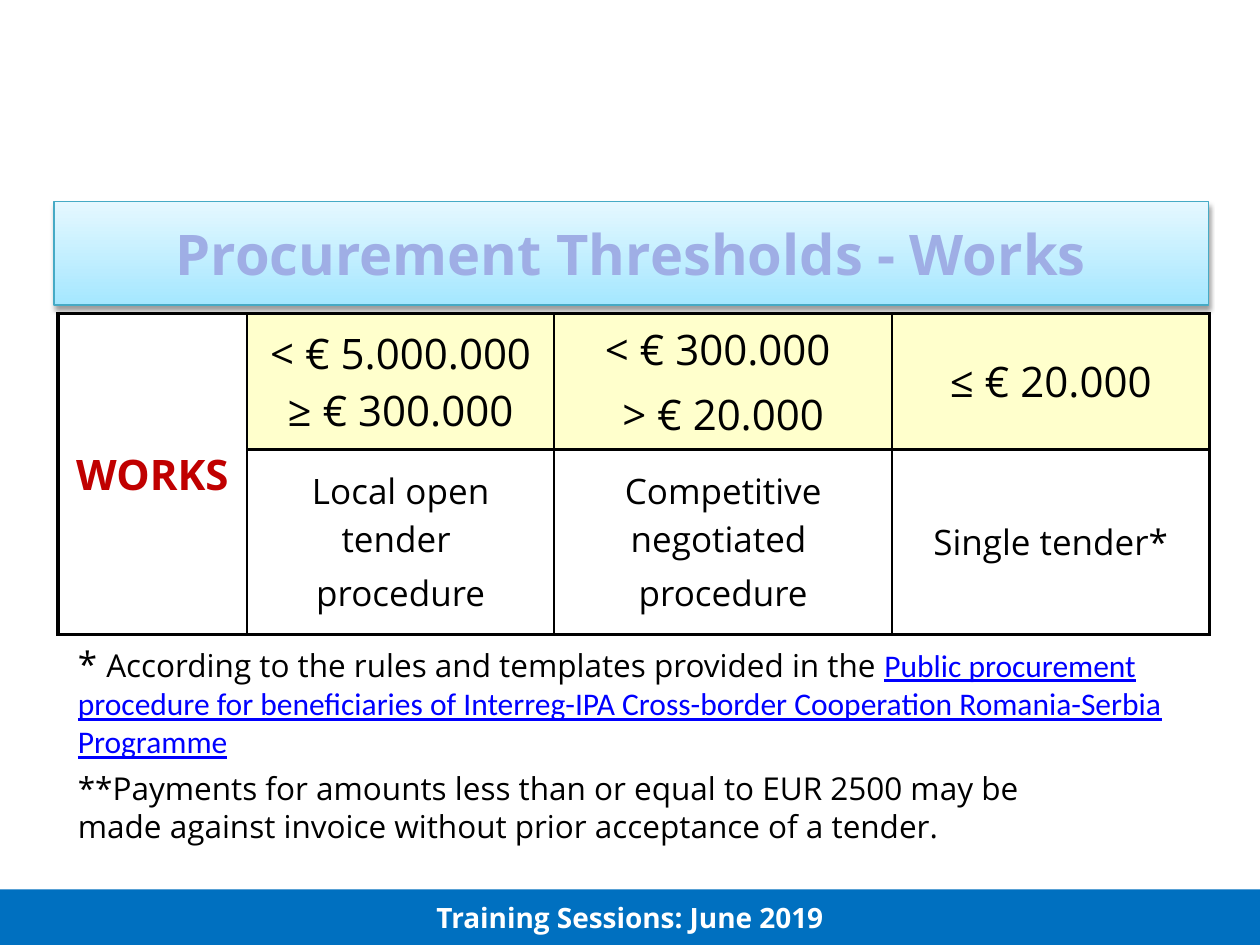
from lxml import etree
from pptx import Presentation
from pptx.dml.color import RGBColor
from pptx.enum import shapes, text
from pptx.oxml.ns import qn
from pptx.util import Inches, Pt

COLORS = {
    "footer": "0070C0", "white": "FFFFFF", "black": "000000", "title": "9FAEE5",
    "title_top": "E5F8FF", "title_bottom": "A5E7FF", "title_line": "46AAC5",
    "works": "C00000", "threshold": "FFFFCC", "link": "0000FF",
}
FONT = "Open Sans"
TITLE = "Procurement Thresholds - Works"
FOOTER = "Training Sessions: June 2019"
CATEGORY = "WORKS"
THRESHOLDS = [["< € 5.000.000 ≥ € 300.000"], ["< € 300.000 ", "> € 20.000"], ["≤ € 20.000"]]
PROCEDURES = [["Local open tender ", "procedure"], ["Competitive negotiated ", "procedure"],
              ["Single tender*"]]
COLUMN_WIDTHS = [1.5, 2.44, 2.68, 2.52]
ROW_HEIGHTS = [1.07, 1.47]
COLUMN_LINES = [2.25, 1, 1.5, 1, 2.25]
ROW_LINE = 2.25
# Each run: words, size, font, colour, underlined
NOTES = [
    [("* ", 20, FONT, "black", False),
     ("According to the rules and templates provided in the ", 18, FONT, "black", False),
     ("Public procurement procedure for beneficiaries of Interreg-IPA Cross-border "
      "Cooperation Romania-Serbia Programme", 18, "Calibri", "link", True)],
    [("**Payments for amounts less than or equal to EUR 2500 may be\v"
      "made against invoice without prior acceptance of a tender.", 18, FONT, "black", False)],
]


def color(name):
    return RGBColor.from_string(COLORS[name])


def style(font, size, name, bold=False, face=FONT):
    font.size, font.name, font.bold = Pt(size), face, bold
    font.color.rgb = color(name)


def write_centred(frame, lines, size, name, bold=False):
    for index, line in enumerate(lines):
        paragraph = frame.add_paragraph() if index else frame.paragraphs[0]
        paragraph.text = line
        paragraph.alignment = text.PP_ALIGN.CENTER
        if index:
            paragraph.space_before = Pt(size * 0.2)
        style(paragraph.font, size, name, bold)


def add_bar(slide, left, top, width, height, words, size, name):
    bar = slide.shapes.add_shape(shapes.MSO_SHAPE.RECTANGLE, Inches(left), Inches(top),
                                 Inches(width), Inches(height))
    bar.shadow.inherit = False
    bar.text_frame.vertical_anchor = text.MSO_ANCHOR.MIDDLE
    write_centred(bar.text_frame, [words], size, name, True)
    return bar


def add_title(slide):
    bar = add_bar(slide, 0.43, 1.6, 9.16, 0.82, TITLE, 32, "title")
    bar.fill.gradient()
    bar.fill.gradient_angle = 270
    for stop, name in zip(bar.fill.gradient_stops, ("title_top", "title_bottom")):
        stop.color.rgb = color(name)
    bar.line.color.rgb = color("title_line")
    bar.line.width = Pt(0.75)
    effects = bar._element.spPr.find(qn("a:effectLst"))
    shadow = etree.SubElement(effects, qn("a:outerShdw"), blurRad=str(Pt(3)),
                              dist=str(Pt(2)), dir="5400000", rotWithShape="0")
    shade = etree.SubElement(shadow, qn("a:srgbClr"), val=COLORS["black"])
    etree.SubElement(shade, qn("a:alpha"), val="38000")


def set_borders(cell, widths):
    """Draw left, right, top and bottom lines; the cell's fill must come after them."""
    properties = cell._tc.get_or_add_tcPr()
    for side, width in zip("LRTB", widths):
        line = etree.SubElement(properties, qn("a:ln" + side), w=str(Pt(width)))
        fill = etree.SubElement(line, qn("a:solidFill"))
        etree.SubElement(fill, qn("a:srgbClr"), val=COLORS["black"])


def add_threshold_table(slide):
    table = slide.shapes.add_table(
        len(ROW_HEIGHTS), len(COLUMN_WIDTHS), Inches(0.46), Inches(2.49),
        Inches(sum(COLUMN_WIDTHS)), Inches(sum(ROW_HEIGHTS))).table
    for column, width in zip(table.columns, COLUMN_WIDTHS):
        column.width = Inches(width)
    for row, height in zip(table.rows, ROW_HEIGHTS):
        row.height = Inches(height)
    table.cell(0, 0).merge(table.cell(1, 0))
    for row_index, entries in enumerate((THRESHOLDS, PROCEDURES)):
        for column_index in range(len(COLUMN_WIDTHS)):
            cell = table.cell(row_index, column_index)
            set_borders(cell, (*COLUMN_LINES[column_index:column_index + 2], ROW_LINE, ROW_LINE))
            cell.vertical_anchor = text.MSO_ANCHOR.MIDDLE
            if column_index and row_index == 0:
                cell.fill.solid()
                cell.fill.fore_color.rgb = color("threshold")
            else:
                cell.fill.background()
            if column_index:
                write_centred(cell.text_frame, entries[column_index - 1],
                              (24, 20)[row_index], "black")
    write_centred(table.cell(0, 0).text_frame, [CATEGORY], 24, "works", True)


def add_notes(slide):
    frame = slide.shapes.add_textbox(Inches(0.52), Inches(5.08), Inches(9.23),
                                     Inches(1.71)).text_frame
    frame.word_wrap = True
    for index, runs in enumerate(NOTES):
        paragraph = frame.add_paragraph() if index else frame.paragraphs[0]
        paragraph.line_spacing = Pt(21.7)
        if index:
            paragraph.space_before = Pt(5)
        for words, size, face, name, underlined in runs:
            for line_index, line in enumerate(words.split("\v")):
                if line_index:
                    paragraph.add_line_break()
                run = paragraph.add_run()
                run.text = line
                style(run.font, size, name, face=face)
                run.font.underline = underlined


def main():
    presentation = Presentation()
    presentation.slide_width, presentation.slide_height = Inches(10), Inches(7.5)
    slide = presentation.slides.add_slide(presentation.slide_layouts[6])
    footer = add_bar(slide, 0, 7.06, 10, 0.44, FOOTER, 16, "white")
    footer.fill.solid()
    footer.fill.fore_color.rgb = color("footer")
    footer.line.fill.background()
    add_title(slide)
    add_threshold_table(slide)
    add_notes(slide)
    presentation.save("out.pptx")


if __name__ == "__main__":
    main()
